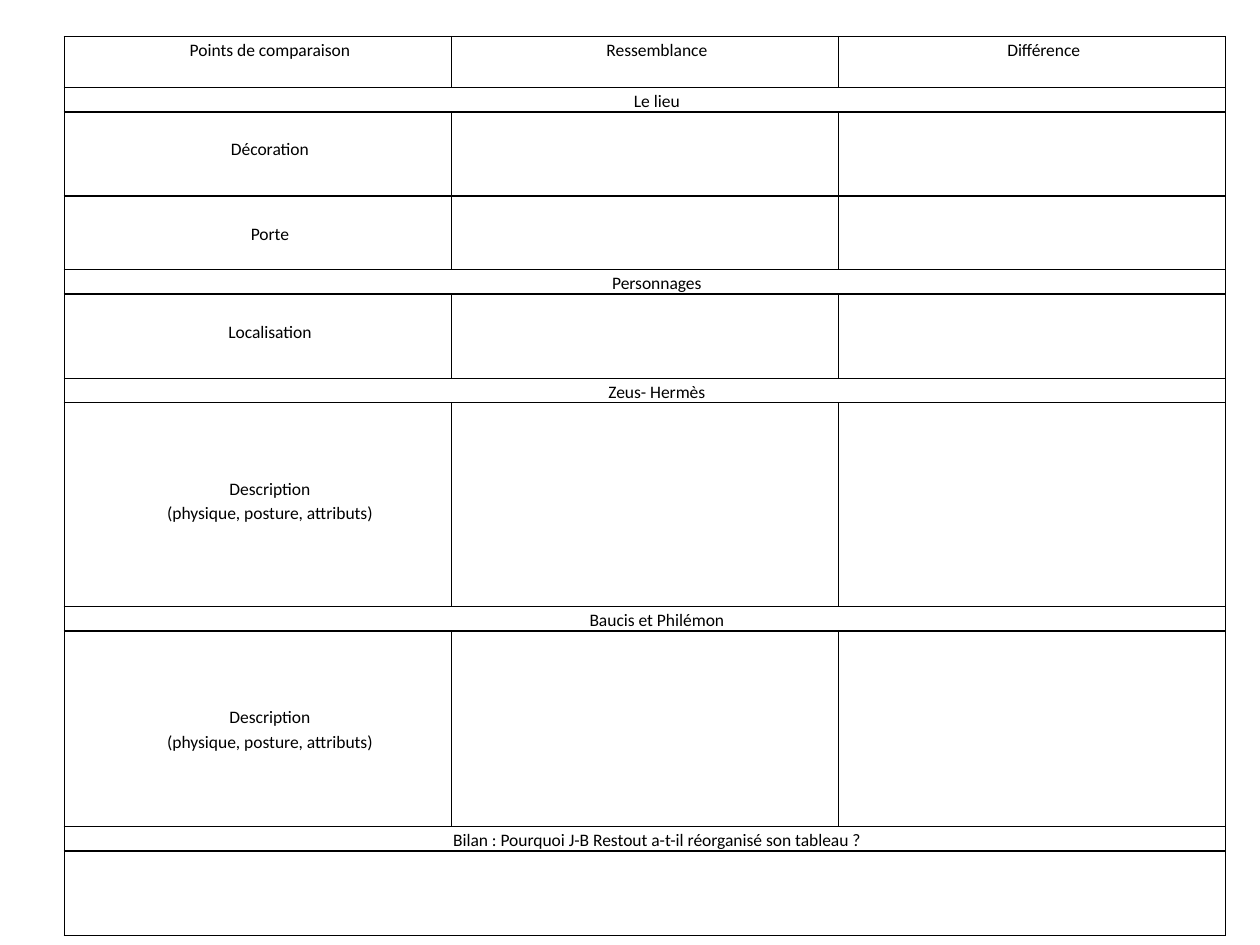
import pptx
import pptx.dml.color
import pptx.enum.text
import pptx.oxml.ns
import pptx.util
from lxml import etree

Cm = pptx.util.Cm
Pt = pptx.util.Pt
qn = pptx.oxml.ns.qn


def color(hex_value):
    return pptx.dml.color.RGBColor.from_string(hex_value)


class SlideBuilder:
    font = "Calibri"
    size = 10
    ink = "000000"
    border_width = 1
    line_spacing = 1.15
    line_height = 0.49
    side_margin = 0.1
    indent_left = 1.75
    indent_right = 1.27

    def __init__(self, prs):
        self.slide = prs.slides.add_slide(prs.slide_layouts[6])

    def table(self, left, top, col_widths, rows):
        heights = [height for height, _, _, _ in rows]
        frame = self.slide.shapes.add_table(
            len(rows), len(col_widths), Cm(left), Cm(top),
            Cm(sum(col_widths)), Cm(sum(heights)))
        table = frame.table
        table.first_row = False
        table.horz_banding = False
        for column, width in zip(table.columns, col_widths):
            column.width = Cm(width)
        for i, (height, merged, lines_above, texts) in enumerate(rows):
            table.rows[i].height = Cm(height)
            for j in range(len(col_widths)):
                cell = table.cell(i, j)
                self.cell(cell, texts[j] if j < len(texts) else "", lines_above)
            if merged:
                table.cell(i, 0).merge(table.cell(i, len(col_widths) - 1))
        return table

    def cell(self, cell, text, lines_above):
        cell.margin_left = cell.margin_right = Cm(self.side_margin)
        cell.margin_top = Cm(lines_above * self.line_height if text else 0)
        cell.margin_bottom = 0
        self.borders(cell)
        cell.fill.background()
        tf = cell.text_frame
        for k, line in enumerate(text.split("\n")):
            p = tf.add_paragraph() if k else tf.paragraphs[0]
            self.paragraph(p, line)

    def borders(self, cell):
        tc_pr = cell._tc.get_or_add_tcPr()
        for side in ("a:lnL", "a:lnR", "a:lnT", "a:lnB"):
            ln = etree.SubElement(tc_pr, qn(side), w=str(Pt(self.border_width)))
            fill = etree.SubElement(ln, qn("a:solidFill"))
            etree.SubElement(fill, qn("a:srgbClr"), val=self.ink)

    def paragraph(self, p, text):
        p.alignment = pptx.enum.text.PP_ALIGN.CENTER
        p.line_spacing = self.line_spacing
        p_pr = p._p.get_or_add_pPr()
        p_pr.set("marL", str(Cm(self.indent_left)))
        p_pr.set("marR", str(Cm(self.indent_right)))
        p_pr.set("indent", "0")
        if text:
            r = p.add_run()
            r.text = text
            r.font.name = self.font
            r.font.size = Pt(self.size)
            r.font.color.rgb = color(self.ink)
        else:
            p._p.get_or_add_endParaRPr().set("sz", str(self.size * 100))


def section(title):
    return 0.49, True, 0, [title]


def entry(height, lines_above, label):
    return height, False, lines_above, [label]


def main():
    prs = pptx.Presentation()
    prs.slide_width = Cm(25.4)
    prs.slide_height = Cm(19.05)
    description = "Description\n(physique, posture, attributs)"
    rows = [
        (1.02, False, 0, ["Points de comparaison", "Ressemblance", "Différence"]),
        section("Le lieu"),
        entry(1.7, 1, "Décoration"),
        entry(1.48, 1, "Porte"),
        section("Personnages"),
        entry(1.7, 1, "Localisation"),
        section("Zeus- Hermès"),
        entry(4.11, 3, description),
        section("Baucis et Philémon"),
        entry(3.94, 3, description),
        section("Bilan : Pourquoi J-B Restout a-t-il réorganisé son tableau ?"),
        (1.7, True, 0, []),
    ]
    SlideBuilder(prs).table(1.3, 0.74, [7.8] * 3, rows)
    prs.save("out.pptx")


if __name__ == "__main__":
    main()
